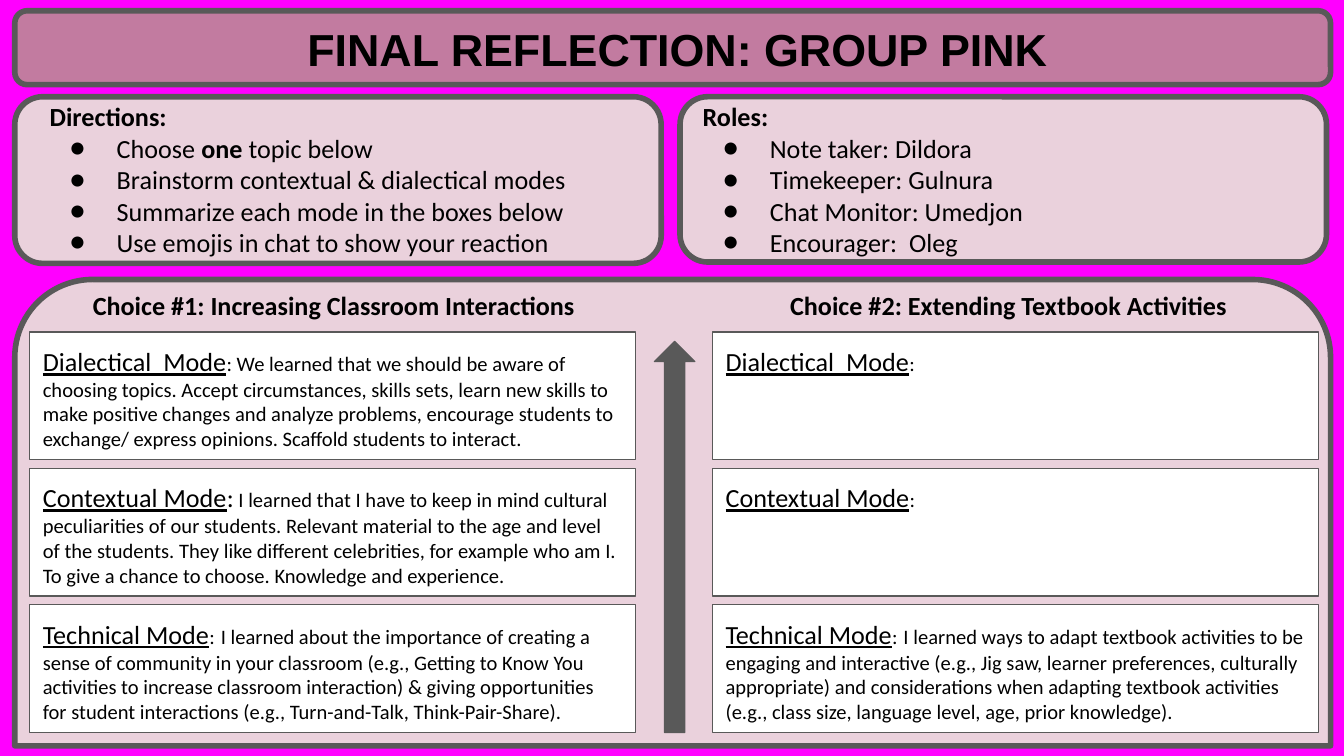
from dataclasses import dataclass

from lxml import etree
from pptx import Presentation
from pptx.dml.color import RGBColor
from pptx.enum.shapes import MSO_SHAPE as Preset
from pptx.enum.text import MSO_ANCHOR as Anchor, MSO_AUTO_SIZE as AutoSize, PP_ALIGN as Align
from pptx.oxml.ns import qn
from pptx.util import Inches, Pt


@dataclass(frozen=True)
class Theme:
    background: str = "FF00FF"
    banner: str = "C27BA0"
    panel: str = "EAD1DC"
    card: str = "FFFFFF"
    outline: str = "595959"
    ink: str = "000000"
    title_font: str = "Arial"
    body_font: str = "Calibri"
    title_size: float = 24
    heading_size: float = 14
    body_size: float = 11
    thick: float = 3
    thin: float = 0.75


THEME = Theme()

DIRECTIONS = [
    [("Choose ", False), ("one", True), (" topic below", False)],
    [("Brainstorm contextual & dialectical modes", False)],
    [("Summarize each mode in the boxes below", False)],
    [("Use emojis in chat to show your reaction", False)],
]
ROLES = [
    [("Note taker: Dildora", False)],
    [("Timekeeper: Gulnura", False)],
    [("Chat Monitor: Umedjon", False)],
    [("Encourager:  Oleg", False)],
]
SMALL, LARGE = THEME.body_size, THEME.heading_size
CLASSROOM_MODES = [
    ("Dialectical  Mode", [
        (": We learned that we should be aware of choosing topics. Accept circumstances, "
         "skills sets, learn new skills to make positive changes and analyze problems, "
         "encourage students to exchange/ express opinions. Scaffold students to interact.", SMALL)]),
    ("Contextual Mode", [
        (":", LARGE),
        (" I learned that I have to keep in mind cultural peculiarities of our students. "
         "Relevant material to the age and level of the students. They like different "
         "celebrities, for example who am I. To give a chance to choose. "
         "Knowledge and experience.", SMALL)]),
    ("Technical Mode", [
        (":", SMALL), (" ", LARGE),
        ("I learned about the importance of creating a sense of community in your classroom "
         "(e.g., Getting to Know You activities to increase classroom interaction) & giving "
         "opportunities for student interactions (e.g., Turn-and-Talk, Think-Pair-Share).", SMALL)]),
]
TEXTBOOK_MODES = [
    ("Dialectical  Mode", [(":", SMALL)]),
    ("Contextual Mode", [(":", SMALL)]),
    ("Technical Mode", [
        (":", SMALL), (" ", LARGE),
        ("I learned ways to adapt textbook activities to be engaging and interactive (e.g., "
         "Jig saw, learner preferences, culturally appropriate) and considerations when "
         "adapting textbook activities (e.g., class size, language level, age, "
         "prior knowledge).", SMALL)]),
]


def add_run(paragraph, text, size=THEME.heading_size, font=THEME.body_font, bold=False, underline=False):
    run = paragraph.add_run()
    run.text = text
    run.font.size = Pt(size)
    run.font.name = font
    run.font.bold = bold
    run.font.underline = underline
    run.font.color.rgb = RGBColor.from_string(THEME.ink)


def add_block(slide, preset, box, fill, width, adjustments=()):
    shape = slide.shapes.add_shape(preset, *map(Inches, box))
    shape.shadow.inherit = False
    shape.fill.solid()
    shape.fill.fore_color.rgb = RGBColor.from_string(fill)
    shape.line.color.rgb = RGBColor.from_string(THEME.outline)
    shape.line.width = Pt(width)
    for index, value in enumerate(adjustments):
        shape.adjustments[index] = value
    return shape


def prepare_frame(shape, align=Align.LEFT):
    frame = shape.text_frame
    frame.word_wrap = True
    frame.auto_size = AutoSize.NONE
    frame.vertical_anchor = Anchor.TOP
    frame.margin_left = frame.margin_right = frame.margin_top = frame.margin_bottom = Inches(0.1)
    frame.paragraphs[0].alignment = align
    return frame


def add_text_box(slide, box, align=Align.LEFT):
    return prepare_frame(slide.shapes.add_textbox(*map(Inches, box)), align)


def set_bullet(paragraph):
    properties = paragraph._p.get_or_add_pPr()
    properties.set("marL", str(Inches(0.5)))
    properties.set("indent", str(Inches(-0.35)))
    color = etree.SubElement(properties, qn("a:buClr"))
    etree.SubElement(color, qn("a:srgbClr")).set("val", THEME.ink)
    etree.SubElement(properties, qn("a:buSzPts")).set("val", str(THEME.heading_size * 100))
    etree.SubElement(properties, qn("a:buFont")).set("typeface", THEME.body_font)
    etree.SubElement(properties, qn("a:buChar")).set("char", "●")


def add_banner(slide, box, text):
    left, top, width, height = box
    banner = add_block(slide, Preset.ROUNDED_RECTANGLE, box, THEME.banner, THEME.thick, [0.167])
    title = slide.shapes.title
    title.element.addprevious(banner.element)
    title.left, title.top = Inches(left + 0.07), Inches(top - 0.02)
    title.width, title.height = Inches(width - 0.07), Inches(height)
    paragraph = prepare_frame(title, Align.CENTER).paragraphs[0]
    add_run(paragraph, text, size=THEME.title_size, font=THEME.title_font, bold=True)


def add_list_panel(slide, box, heading, items, inset):
    left, top, width, height = box
    add_block(slide, Preset.ROUNDED_RECTANGLE, box, THEME.panel, THEME.thick, [0.167])
    frame = add_text_box(slide, (left + inset, top - 0.07, 4.41, 1.31))
    add_run(frame.paragraphs[0], heading, bold=True)
    for item in items:
        paragraph = frame.add_paragraph()
        set_bullet(paragraph)
        for text, bold in item:
            add_run(paragraph, text, bold=bold)


def add_choice_column(slide, box, heading, heading_left, modes):
    left, top, width, height = box
    heading_frame = add_text_box(slide, (heading_left, top, 4.75, 0.39), Align.CENTER)
    add_run(heading_frame.paragraphs[0], heading, bold=True)
    card_height, first_card = 0.95, top + 0.42
    pitch = (top + height - card_height - first_card) / (len(modes) - 1)
    for row, (mode, details) in enumerate(modes):
        card_box = (left, first_card + row * pitch, width, card_height)
        card = add_block(slide, Preset.RECTANGLE, card_box, THEME.card, THEME.thin)
        paragraph = prepare_frame(card).paragraphs[0]
        add_run(paragraph, mode, underline=True)
        for text, size in details:
            add_run(paragraph, text, size=size)


def add_choices(slide, box):
    left, top, width, height = box
    add_block(slide, Preset.ROUND_2_SAME_RECTANGLE, box, THEME.panel, THEME.thick, [0.167, 0])
    column_top, column_width, column_height = top - 0.03, 4.51, 3.4
    add_choice_column(slide, (left + 0.11, column_top, column_width, column_height),
                      "Choice #1: Increasing Classroom Interactions", left, CLASSROOM_MODES)
    add_choice_column(slide, (left + 5.19, column_top, column_width, column_height),
                      "Choice #2: Extending Textbook Activities", left + 5.02, TEXTBOOK_MODES)
    add_block(slide, Preset.UP_ARROW, (left + 4.76, top + 0.46, 0.3, 2.91),
              THEME.outline, THEME.thin, [0.5, 0.5])


def main():
    presentation = Presentation()
    presentation.slide_width = Inches(10)
    presentation.slide_height = Inches(10 * 9 / 16)
    slide = presentation.slides.add_slide(presentation.slide_layouts[5])
    slide.background.fill.solid()
    slide.background.fill.fore_color.rgb = RGBColor.from_string(THEME.background)
    add_banner(slide, (0.11, 0.08, 9.79, 0.55), "FINAL REFLECTION: GROUP PINK")
    add_list_panel(slide, (0.11, 0.72, 4.81, 1.24), "Directions:", DIRECTIONS, inset=0.16)
    add_list_panel(slide, (5.06, 0.72, 4.81, 1.23), "Roles:", ROLES, inset=0.07)
    add_choices(slide, (0.11, 2.08, 9.79, 3.47))
    presentation.save("out.pptx")


if __name__ == "__main__":
    main()
